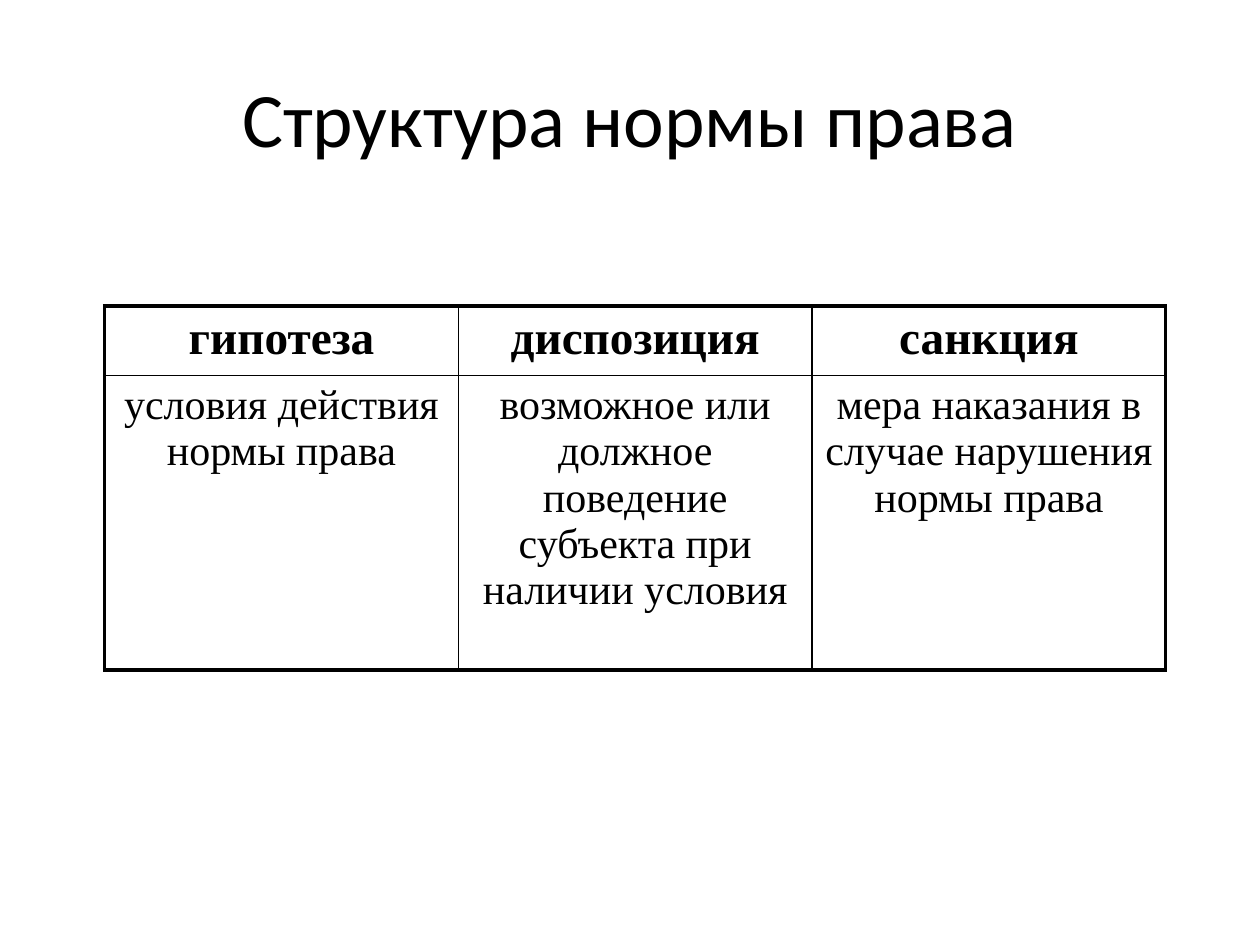
from dataclasses import dataclass

from lxml import etree
from pptx import Presentation
from pptx import util as u
from pptx.dml.color import RGBColor
from pptx.enum import text
from pptx.oxml import ns


@dataclass(frozen=True)
class Theme:
    ink: str = "000000"
    title_font: str = "Calibri"
    table_font: str = "Times New Roman"
    title_size: int = 44
    header_size: int = 27
    body_size: int = 24
    outer_line: float = 2.25
    inner_line: float = 1


THEME = Theme()
HEADING = "Структура нормы права"
NORM_PARTS = [
    ("гипотеза", "условия действия нормы права"),
    ("диспозиция", "возможное или должное поведение субъекта при наличии условия"),
    ("санкция", "мера наказания в случае нарушения нормы права"),
]
ROW_HEIGHTS = [u.Cm(1.4), u.Cm(5.94)]


def write(frame, wording, font_name, size, bold=False):
    paragraph = frame.paragraphs[0]
    paragraph.text = wording
    paragraph.alignment = text.PP_ALIGN.CENTER
    font = paragraph.font
    font.name = font_name
    font.size = u.Pt(size)
    font.bold = bold
    font.color.rgb = RGBColor.from_string(THEME.ink)


def add_heading(slide):
    heading = slide.shapes.add_textbox(u.Cm(1.27), u.Cm(0.76), u.Cm(22.86), u.Cm(3.18))
    frame = heading.text_frame
    frame.word_wrap = True
    frame.vertical_anchor = text.MSO_ANCHOR.MIDDLE
    write(frame, HEADING, THEME.title_font, THEME.title_size)


def draw_border(cell, side, is_outer):
    width = THEME.outer_line if is_outer else THEME.inner_line
    properties = cell._tc.get_or_add_tcPr()
    line = etree.SubElement(properties, ns.qn(f"a:ln{side}"), w=str(u.Pt(width)))
    fill = etree.SubElement(line, ns.qn("a:solidFill"))
    etree.SubElement(fill, ns.qn("a:srgbClr"), val=THEME.ink)


def add_norm_table(slide):
    row_count, column_count = len(ROW_HEIGHTS), len(NORM_PARTS)
    table = slide.shapes.add_table(
        row_count, column_count, u.Cm(2.11), u.Cm(6.17), u.Cm(21.39), sum(ROW_HEIGHTS)
    ).table
    table.first_row = table.horz_banding = False
    for row, height in zip(table.rows, ROW_HEIGHTS):
        row.height = height
    for column, part in enumerate(NORM_PARTS):
        for row, wording in enumerate(part):
            cell = table.cell(row, column)
            is_header = row == 0
            size = THEME.header_size if is_header else THEME.body_size
            write(cell.text_frame, wording, THEME.table_font, size, is_header)
            draw_border(cell, "L", column == 0)
            draw_border(cell, "R", column == column_count - 1)
            draw_border(cell, "T", row == 0)
            draw_border(cell, "B", row == row_count - 1)
            cell.fill.background()


def main():
    presentation = Presentation()
    presentation.slide_width = u.Cm(25.4)
    presentation.slide_height = u.Cm(19.05)
    slide = presentation.slides.add_slide(presentation.slide_layouts[6])
    add_heading(slide)
    add_norm_table(slide)
    presentation.save("out.pptx")


if __name__ == "__main__":
    main()
